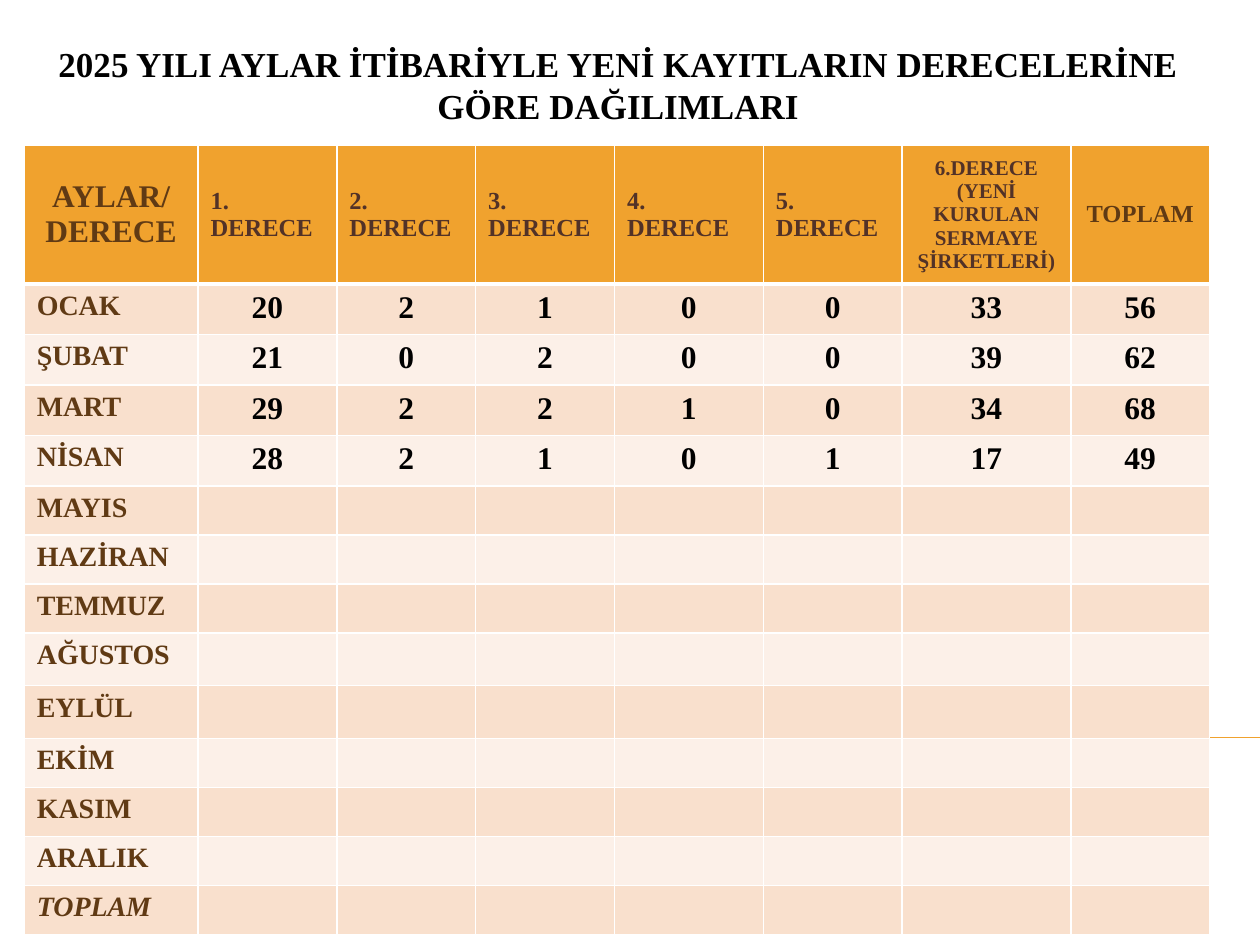
import pptx
import pptx.util
import pptx.dml.color
import pptx.enum.text
import pptx.enum.shapes
import pptx.oxml
import pptx.oxml.ns

Cm, Pt = pptx.util.Cm, pptx.util.Pt
ALIGN = pptx.enum.text.PP_ALIGN
ANCHOR = pptx.enum.text.MSO_ANCHOR
FONT = "Times New Roman"
GOLD, BROWN, DARK, BLACK, WHITE = "F0A22E", "603A14", "523227", "000000", "FFFFFF"
BANDS = ("F9E0CD", "FCF0E8")

TITLE = "2025 YILI AYLAR İTİBARİYLE YENİ KAYITLARIN DERECELERİNE GÖRE DAĞILIMLARI"
HEADS = (
    [("AYLAR/ DERECE", 18, BROWN, ALIGN.CENTER)]
    + [(f"{n}. DERECE", 14, DARK, ALIGN.LEFT) for n in range(1, 6)]
    + [("6.DERECE (YENİ KURULAN SERMAYE ŞİRKETLERİ)", 12, DARK, ALIGN.CENTER),
       ("TOPLAM", 14, BROWN, ALIGN.CENTER)]
)
MONTHS = ["OCAK", "ŞUBAT", "MART", "NİSAN", "MAYIS", "HAZİRAN", "TEMMUZ",
          "AĞUSTOS", "EYLÜL", "EKİM", "KASIM", "ARALIK", "TOPLAM"]
COUNTS = {
    "OCAK": [20, 2, 1, 0, 0, 33, 56],
    "ŞUBAT": [21, 0, 2, 0, 0, 39, 62],
    "MART": [29, 2, 2, 1, 0, 34, 68],
    "NİSAN": [28, 2, 1, 0, 1, 17, 49],
}
WIDTHS = [3.5, 2.8, 2.8, 2.8, 3, 2.8, 3.4, 2.8]
HEAD_H, ROW_H, TALL_H = 2.74, 0.99, 1.06
TALL = ("AĞUSTOS", "EYLÜL")


def color(code):
    return pptx.dml.color.RGBColor.from_string(code)


def write(frame, text, size, code, align, italic=False):
    para = frame.paragraphs[0]
    para.alignment = align
    run = para.add_run()
    run.text = text
    style = {"name": FONT, "size": Pt(size), "bold": True, "italic": italic}
    for key, value in style.items():
        setattr(run.font, key, value)
    run.font.color.rgb = color(code)


def add_rule(slide):
    rule = slide.shapes.add_connector(
        pptx.enum.shapes.MSO_CONNECTOR.STRAIGHT,
        Cm(1.42), Cm(14.86), Cm(25.4), Cm(14.86))
    rule.line.color.rgb = color(GOLD)
    rule.line.width = Pt(0.75)
    props = rule.element.spPr
    props.append(props.makeelement(pptx.oxml.ns.qn("a:effectLst"), {}))


def add_title(slide):
    box = slide.shapes.add_textbox(Cm(0.71), Cm(0.74), Cm(23.5), Cm(1.6))
    box.text_frame.word_wrap = True
    write(box.text_frame, TITLE, 20, BLACK, ALIGN.CENTER)


def paint(cell, code, top=1, base=1):
    """Fill a cell and give it white borders."""
    cell.fill.solid()
    cell.fill.fore_color.rgb = color(code)
    props = cell._tc.get_or_add_tcPr()
    sides = {"lnL": 1, "lnR": 1, "lnT": top, "lnB": base}
    for place, (side, width) in enumerate(sides.items()):
        props.insert(place, pptx.oxml.parse_xml(
            f'<a:{side} {pptx.oxml.ns.nsdecls("a")} w="{Pt(width)}"><a:solidFill>'
            f'<a:srgbClr val="{WHITE}"/></a:solidFill></a:{side}>'))


def shrink(cell):
    """Keep an empty cell from stretching its row."""
    para = cell.text_frame.paragraphs[0]._p
    para.append(para.makeelement(pptx.oxml.ns.qn("a:endParaRPr"), {"sz": "1600"}))


def add_grid(slide):
    heights = [HEAD_H] + [TALL_H if m in TALL else ROW_H for m in MONTHS]
    table = slide.shapes.add_table(
        len(heights), len(WIDTHS), Cm(0.49), Cm(2.93),
        Cm(sum(WIDTHS)), Cm(sum(heights))).table
    for col, width in zip(table.columns, WIDTHS):
        col.width = Cm(width)
    for row, height in zip(table.rows, heights):
        row.height = Cm(height)

    # Header row
    for col, head in enumerate(HEADS):
        cell = table.cell(0, col)
        cell.vertical_anchor = ANCHOR.MIDDLE
        paint(cell, GOLD, base=3)
        write(cell.text_frame, *head)

    # Month rows
    for row, month in enumerate(MONTHS, 1):
        for col in range(len(WIDTHS)):
            cell = table.cell(row, col)
            paint(cell, BANDS[(row - 1) % 2], top=3 if row == 1 else 1)
            if col == 0:
                write(cell.text_frame, month, 16, BROWN, ALIGN.LEFT,
                      italic=month == "TOPLAM")
            elif month in COUNTS:
                write(cell.text_frame, str(COUNTS[month][col - 1]), 18, BLACK,
                      ALIGN.CENTER)
            else:
                shrink(cell)


def main():
    deck = pptx.Presentation()
    deck.slide_width, deck.slide_height = Cm(25.4), Cm(19.05)
    slide = deck.slides.add_slide(deck.slide_layouts[6])
    add_rule(slide)
    add_title(slide)
    add_grid(slide)
    deck.save("out.pptx")


if __name__ == "__main__":
    main()
